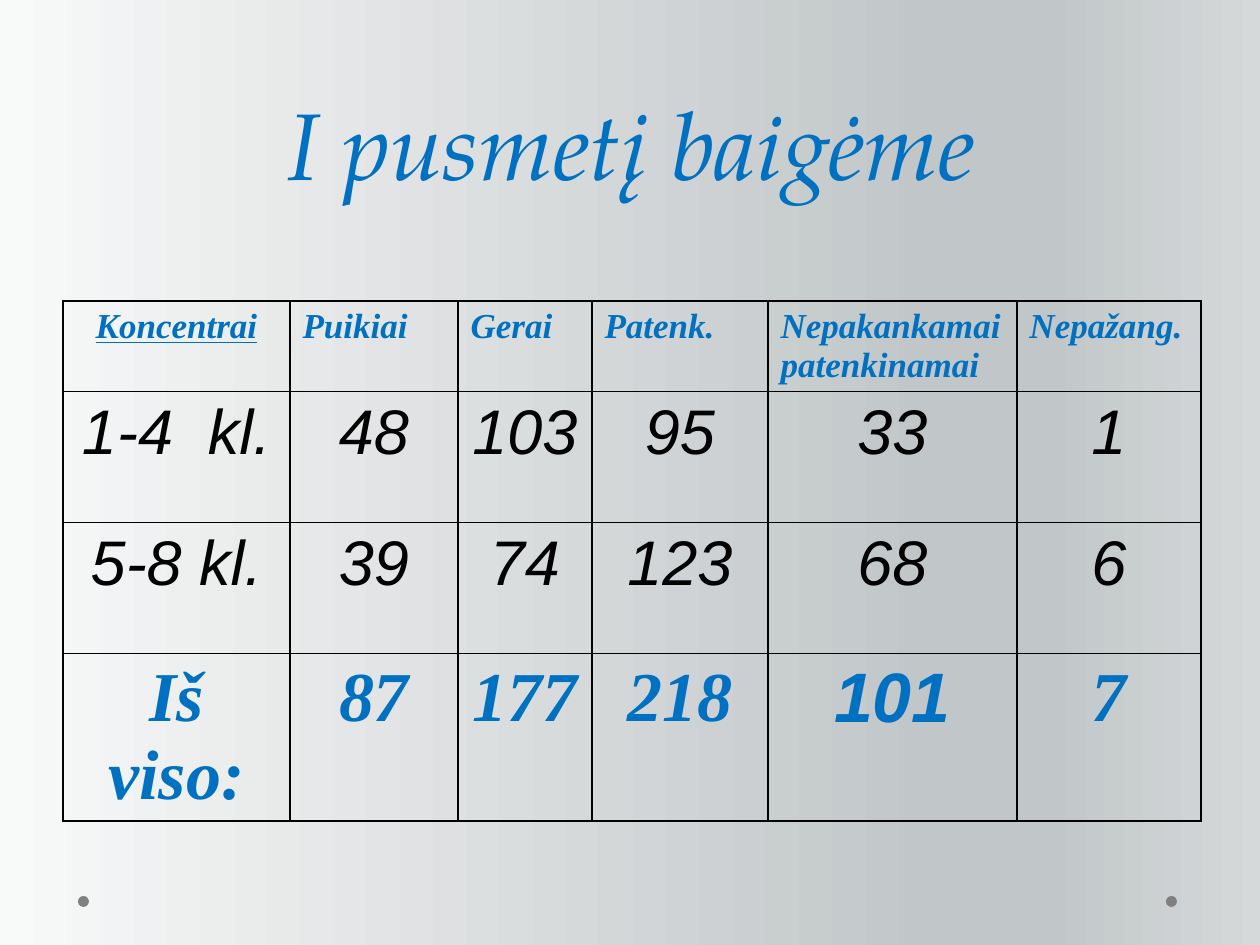
from dataclasses import dataclass

import pptx
import pptx.dml.color
import pptx.enum.dml
import pptx.enum.shapes
import pptx.enum.text
import pptx.oxml
import pptx.oxml.ns
import pptx.util

PX = pptx.util.Inches(1) / 126
CENTER = pptx.enum.text.PP_ALIGN.CENTER
LEFT = pptx.enum.text.PP_ALIGN.LEFT


def px(length):
    return pptx.util.Emu(round(length * PX))


def rgb(code):
    return pptx.dml.color.RGBColor.from_string(code)


@dataclass(frozen=True)
class TextStyle:
    font: str
    size: int
    color: str
    bold: bool = False


class Theme:
    blue = "0070C0"
    black = "000000"
    dot = "808080"
    background = ((0, "F8F9F9"), (74, "C1C6C8"), (83, "C1C6C8"), (100, "D6D9DA"))
    title = TextStyle("TeX Gyre Pagella", 54, blue)
    header = TextStyle("Times New Roman", 20, blue, True)
    body = TextStyle("Arial", 36, black)
    total = TextStyle("Times New Roman", 40, blue, True)
    total_plain = TextStyle("Arial", 40, blue, True)


class SlideBuilder:
    def __init__(self, slide, theme):
        self.slide = slide
        self.theme = theme

    def background(self):
        fill = self.slide.background.fill
        fill.gradient()
        fill.gradient_angle = 0
        stops = self.slide.background._cSld.find(".//" + pptx.oxml.ns.qn("a:gsLst"))
        for stop in list(stops):
            stops.remove(stop)
        for percent, color in self.theme.background:
            stops.append(pptx.oxml.parse_xml(
                f'<a:gs {pptx.oxml.ns.nsdecls("a")} pos="{percent * 1000}">'
                f'<a:srgbClr val="{color}"/></a:gs>'))

    def format_text(self, paragraph, style, align):
        paragraph.alignment = align
        for run in paragraph.runs:
            run.font.name = style.font
            run.font.size = pptx.util.Pt(style.size)
            run.font.bold = style.bold
            run.font.italic = True
            run.font.color.rgb = rgb(style.color)

    def title(self, text, left, top, width, height):
        shape = self.slide.shapes.title
        shape.left, shape.top = px(left), px(top)
        shape.width, shape.height = px(width), px(height)
        frame = shape.text_frame
        frame.text = text
        frame.auto_size = pptx.enum.text.MSO_AUTO_SIZE.NONE
        frame.vertical_anchor = pptx.enum.text.MSO_ANCHOR.BOTTOM
        paragraph = frame.paragraphs[0]
        paragraph.line_spacing = pptx.util.Pt(58)
        self.format_text(paragraph, self.theme.title, CENTER)

    def dot(self, left, top, size):
        shape = self.slide.shapes.add_shape(
            pptx.enum.shapes.MSO_SHAPE.OVAL, px(left), px(top), px(size), px(size))
        shape.shadow.inherit = False
        shape.fill.solid()
        shape.fill.fore_color.rgb = rgb(self.theme.dot)
        shape.line.fill.background()

    def cell(self, cell, text, style, align):
        cell.text = text
        self.format_text(cell.text_frame.paragraphs[0], style, align)
        properties = cell._tc.get_or_add_tcPr()
        for side in ("lnL", "lnR", "lnT", "lnB"):
            properties.append(pptx.oxml.parse_xml(
                f'<a:{side} {pptx.oxml.ns.nsdecls("a")} w="{pptx.util.Pt(1)}">'
                f'<a:solidFill><a:srgbClr val="{self.theme.black}"/></a:solidFill>'
                f'</a:{side}>'))
        cell.fill.background()

    def table(self, rows, styles, left, top, widths, heights):
        table = self.slide.shapes.add_table(
            len(heights), len(widths), px(left), px(top),
            px(sum(widths)), px(sum(heights))).table
        table.first_row = table.horz_banding = False
        for column, width in zip(table.columns, widths):
            column.width = px(width)
        for row, height in zip(table.rows, heights):
            row.height = px(height)
        for r, (texts, style) in enumerate(zip(rows, styles)):
            for c, text in enumerate(texts):
                align = LEFT if r == 0 and c > 0 else CENTER
                self.cell(table.cell(r, c), text, style, align)
        return table


def main():
    presentation = pptx.Presentation()
    presentation.slide_width, presentation.slide_height = px(1260), px(945)
    theme = Theme()
    slide = presentation.slides.add_slide(presentation.slide_layouts[5])
    builder = SlideBuilder(slide, theme)

    # Background and corner dots
    builder.background()
    for left in (1166, 78):
        builder.dot(left, 896, 11)

    # Title
    builder.title("I pusmetį baigėme", 54, 96, 1155, 110)

    # Results by grade group
    rows = (
        ("Koncentrai", "Puikiai", "Gerai", "Patenk.",
         "Nepakankamai patenkinamai", "Nepažang."),
        ("1-4  kl.", "48", "103", "95", "33", "1"),
        ("5-8 kl.", "39", "74", "123", "68", "6"),
        ("Iš viso:", "87", "177", "218", "101", "7"),
    )
    table = builder.table(
        rows, (theme.header, theme.body, theme.body, theme.total),
        63, 301, (227, 168, 134, 176, 249, 184), (90, 131, 131, 168))

    # Two cells that differ from their rows
    table.cell(0, 0).text_frame.paragraphs[0].runs[0].font.underline = True
    builder.format_text(
        table.cell(3, 4).text_frame.paragraphs[0], theme.total_plain, CENTER)

    presentation.save("out.pptx")


if __name__ == "__main__":
    main()
